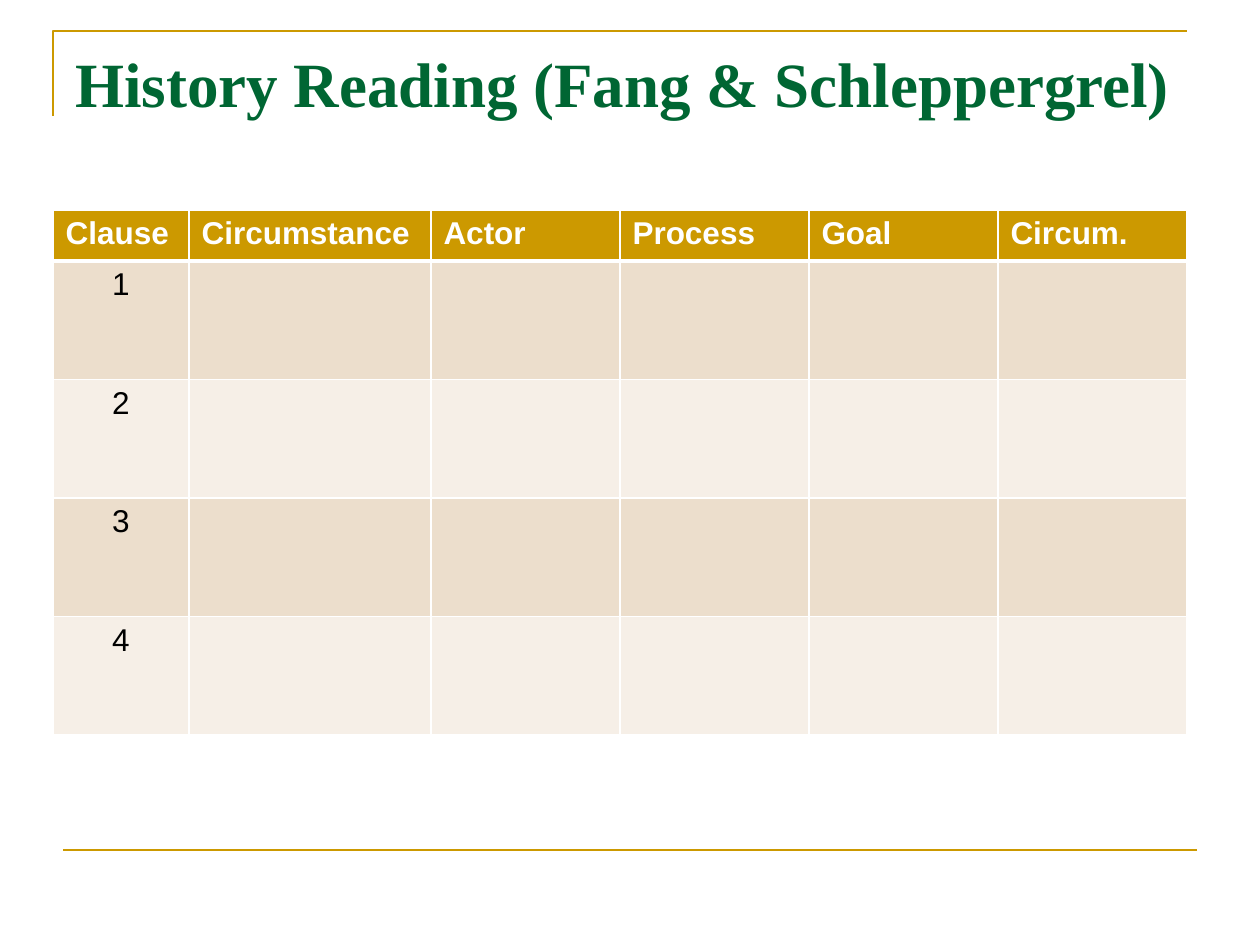
import pptx
import pptx.util
import pptx.dml.color
import pptx.enum.shapes
import pptx.enum.text
import pptx.oxml
import pptx.oxml.ns
from lxml import etree

RGB = pptx.dml.color.RGBColor
GOLD = RGB(0xCC, 0x99, 0x00)
GREEN = RGB(0x00, 0x66, 0x33)
WHITE = RGB(0xFF, 0xFF, 0xFF)
BLACK = RGB(0x00, 0x00, 0x00)
BANDS = [RGB(0xEC, 0xDE, 0xCC), RGB(0xF6, 0xEF, 0xE7)]
ALIGN = pptx.enum.text.PP_ALIGN

# Content
TITLE = "History Reading (Fang & Schleppergrel)"
HEADERS = ["Clause", "Circumstance", "Actor", "Process", "Goal", "Circum."]
CLAUSES = ["1", "2", "3", "4"]

# Layout in px
COL_WIDTHS = [136, 242, 189, 189, 189, 189]
TABLE_LEFT, TABLE_TOP = 53, 210
HEADER_H, BODY_H = 51, 474
CORNER = [(53, 116), (53, 31), (1187, 31)]
FOOT_LINE = (63, 850, 1197, 850)
TITLE_BOX = (63, 38, 1134, 157)

TITLE_FONT = {"name": "Times New Roman", "size": pptx.util.Pt(36), "bold": True}
HEAD_FONT = {"name": "Arial", "size": pptx.util.Pt(18), "bold": True}
BODY_FONT = {**HEAD_FONT, "bold": False}


def px(n):
    return pptx.util.Emu(round(n * 914400 / 126))


def write(p, text, font, color):
    r = p.add_run()
    r.text = text
    for name, value in font.items():
        setattr(r.font, name, value)
    r.font.color.rgb = color


def gold_line(sp):
    sp.line.color.rgb = GOLD
    sp.line.width = pptx.util.Pt(1.5)


def add_borders(cell, widths):
    tcPr = cell._tc.get_or_add_tcPr()
    for side, pt in widths.items():
        ln = etree.SubElement(tcPr, pptx.oxml.ns.qn(f"a:ln{side}"), w=str(pptx.util.Pt(pt)))
        fill = etree.SubElement(ln, pptx.oxml.ns.qn("a:solidFill"))
        etree.SubElement(fill, pptx.oxml.ns.qn("a:srgbClr"), val=str(WHITE))


prs = pptx.Presentation()
prs.slide_width, prs.slide_height = px(1260), px(945)
slide = prs.slides.add_slide(prs.slide_layouts[6])
shapes = slide.shapes

# Corner rule at the top left
start, *rest = [(px(x), px(y)) for x, y in CORNER]
builder = shapes.build_freeform(*start)
builder.add_line_segments(rest, close=False)
sp = builder.convert_to_shape()
sp.fill.background()
sp.shadow.inherit = False
gold_line(sp)

# Rule at the foot
line = shapes.add_connector(pptx.enum.shapes.MSO_CONNECTOR.STRAIGHT, *map(px, FOOT_LINE))
etree.SubElement(line._element.spPr, pptx.oxml.ns.qn("a:effectLst"))
gold_line(line)

# Title
tf = shapes.add_textbox(*map(px, TITLE_BOX)).text_frame
tf.word_wrap = True
write(tf.paragraphs[0], TITLE, TITLE_FONT, GREEN)

# Table: a header row, then one banded row per clause
rows = [HEADERS] + [[clause] + [""] * (len(HEADERS) - 1) for clause in CLAUSES]
table = shapes.add_table(len(rows), len(HEADERS), px(TABLE_LEFT), px(TABLE_TOP),
                         px(sum(COL_WIDTHS)), px(HEADER_H + BODY_H)).table
for col, width in zip(table.columns, COL_WIDTHS):
    col.width = px(width)
for i, texts in enumerate(rows):
    head = i == 0
    table.rows[i].height = px(HEADER_H if head else BODY_H / len(CLAUSES))
    for j, text in enumerate(texts):
        cell = table.cell(i, j)
        add_borders(cell, {"L": 1, "R": 1, "T": 3 if i == 1 else 1, "B": 3 if head else 1})
        cell.fill.solid()
        cell.fill.fore_color.rgb = GOLD if head else BANDS[(i - 1) % 2]
        if text:
            p = cell.text_frame.paragraphs[0]
            p.alignment = ALIGN.LEFT if head else ALIGN.CENTER
            write(p, text, HEAD_FONT if head else BODY_FONT, WHITE if head else BLACK)

prs.save("out.pptx")
